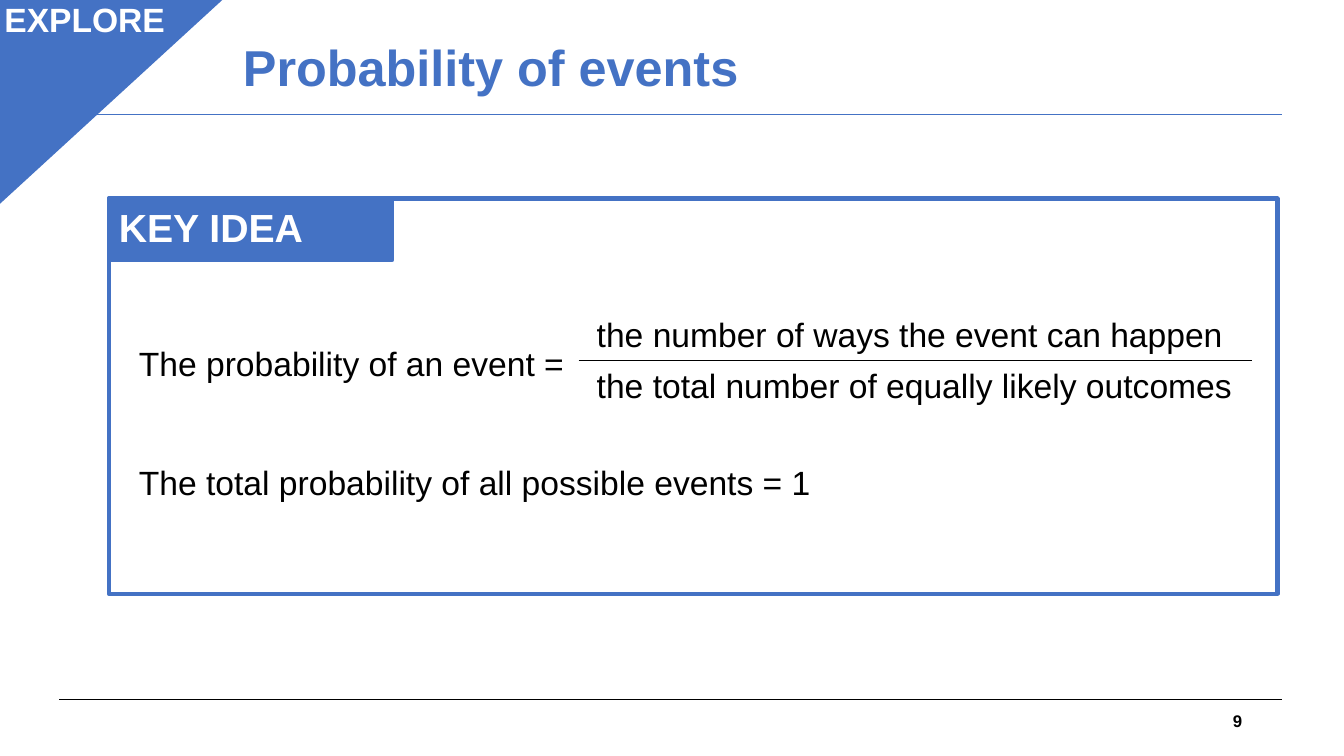
from dataclasses import dataclass

from lxml.etree import SubElement
from pptx import Presentation
from pptx.dml.color import RGBColor
from pptx.enum.shapes import MSO_CONNECTOR, MSO_SHAPE
from pptx.enum.text import MSO_ANCHOR, MSO_AUTO_SIZE, PP_ALIGN
from pptx.oxml.ns import qn
from pptx.util import Emu, Pt

# Content
TITLE = "Probability of events"
SECTION = "EXPLORE"
LABEL = "KEY IDEA"
FORMULA = "The probability of an event ="
FRACTION = [
    "the number of ways the event can happen",
    "the total number of equally likely outcomes",
]
STATEMENT = "The total probability of all possible events = 1"
PAGE = "9"


@dataclass(frozen=True)
class Theme:
    font: str = "Arial"
    blue: RGBColor = RGBColor(0x44, 0x72, 0xC4)
    black: RGBColor = RGBColor(0, 0, 0)
    white: RGBColor = RGBColor(255, 255, 255)
    title: int = 36
    label: int = 28
    body: int = 24
    page: int = 12


THEME = Theme()

# Layout in px, 100 px to the inch
WIDTH, HEIGHT = 1333, 750
RULE_LEFT, RULE_RIGHT = 59, 1272
HEADER_Y, FOOTER_Y = 114, 694
FRAME = (108, 197, 1159, 392)
LABEL_SIZE = (281, 61)
TEXT_LEFT = 128
BAR_LEFT, BAR_RIGHT, BAR_Y = 574, 1242, 358
FRACTION_TOP, STATEMENT_TOP = 307, 453
LINE_HEIGHT = 50


def px(length):
    return Emu(length * 9144)


def write(frame, lines, size, color, bold=False, align=PP_ALIGN.LEFT,
          anchor=MSO_ANCHOR.TOP, wrap=True, after=0):
    frame.word_wrap = wrap
    frame.auto_size = MSO_AUTO_SIZE.NONE
    frame.vertical_anchor = anchor
    frame.text = "\n".join(lines)
    for paragraph in frame.paragraphs:
        paragraph.alignment = align
        paragraph.space_after = Pt(after)
        font = paragraph.font
        font.name, font.size, font.bold = THEME.font, Pt(size), bold
        font.color.rgb = color


def add_text(slide, box, lines, size, color, **style):
    textbox = slide.shapes.add_textbox(*map(px, box))
    write(textbox.text_frame, lines, size, color, **style)


def add_blue_shape(slide, kind, box, weight, filled=True):
    shape = slide.shapes.add_shape(kind, *map(px, box))
    shape.shadow.inherit = False
    if filled:
        shape.fill.solid()
        shape.fill.fore_color.rgb = THEME.blue
    else:
        shape.fill.background()
    shape.line.color.rgb = THEME.blue
    shape.line.width = Pt(weight)
    return shape


def add_rule(slide, left, right, y, color, weight):
    rule = slide.shapes.add_connector(
        MSO_CONNECTOR.STRAIGHT, px(left), px(y), px(right), px(y))
    rule.line.color.rgb = color
    rule.line.width = Pt(weight)
    SubElement(rule._element.spPr, qn("a:effectLst"))


def main():
    presentation = Presentation()
    presentation.slide_width, presentation.slide_height = px(WIDTH), px(HEIGHT)
    slide = presentation.slides.add_slide(presentation.slide_layouts[5])

    # Rules and page number
    add_rule(slide, RULE_LEFT, RULE_RIGHT, FOOTER_Y, THEME.black, 0.75)
    add_rule(slide, RULE_LEFT, RULE_RIGHT, HEADER_Y, THEME.blue, 0.75)
    add_text(slide, (942, 695, 300, 40), [PAGE], THEME.page, THEME.black,
             bold=True, align=PP_ALIGN.RIGHT, anchor=MSO_ANCHOR.MIDDLE)

    # Title
    title = slide.shapes.title
    title.left, title.top, title.width, title.height = map(
        px, (231, 14, 1000, 111))
    write(title.text_frame, [TITLE], THEME.title, THEME.blue, bold=True,
          anchor=MSO_ANCHOR.MIDDLE)
    title.text_frame.paragraphs[0].line_spacing = 0.9

    # Key idea panel
    label = add_blue_shape(slide, MSO_SHAPE.RECTANGLE,
                           FRAME[:2] + LABEL_SIZE, 3)
    write(label.text_frame, [LABEL], THEME.label, THEME.white, bold=True)
    add_blue_shape(slide, MSO_SHAPE.RECTANGLE, FRAME, 3, filled=False)

    # Formula and statement
    add_text(slide, (TEXT_LEFT, 335, BAR_LEFT - TEXT_LEFT, LINE_HEIGHT),
             [FORMULA], THEME.body, THEME.black, wrap=False)
    add_text(slide, (BAR_LEFT + 8, FRACTION_TOP, BAR_RIGHT - BAR_LEFT,
                     2 * LINE_HEIGHT),
             FRACTION, THEME.body, THEME.black, after=7.5)
    add_rule(slide, BAR_LEFT, BAR_RIGHT, BAR_Y, THEME.black, 0.5)
    add_text(slide, (TEXT_LEFT, STATEMENT_TOP, BAR_RIGHT - TEXT_LEFT,
                     LINE_HEIGHT),
             [STATEMENT], THEME.body, THEME.black)

    # Section corner
    corner = add_blue_shape(slide, MSO_SHAPE.ISOSCELES_TRIANGLE,
                            (-3, -6, 229, 210), 1)
    corner.adjustments[0] = 0
    corner._element.spPr.xfrm.set("flipV", "1")
    add_text(slide, (-8, -6, 184, LINE_HEIGHT), [SECTION], THEME.body,
             THEME.white, bold=True, align=PP_ALIGN.CENTER)

    presentation.save("out.pptx")


if __name__ == "__main__":
    main()
